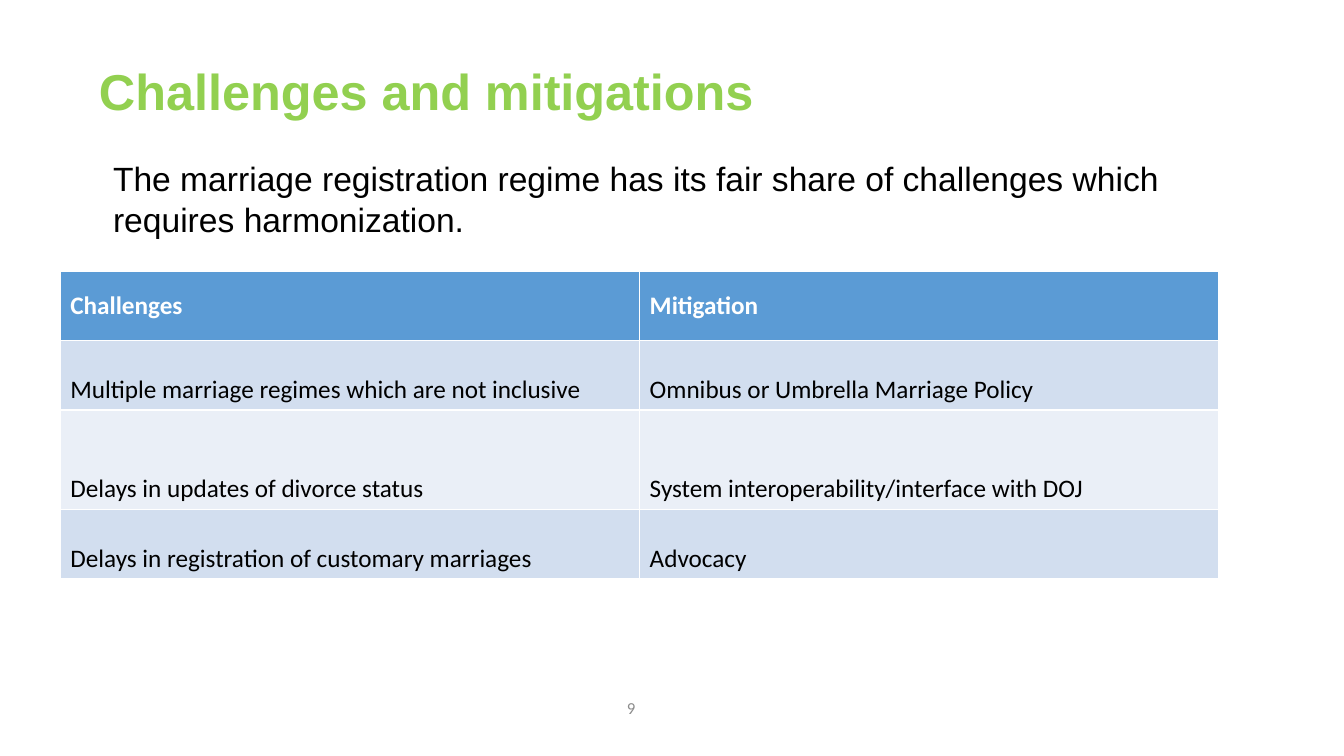
from pptx import Presentation
from pptx.dml.color import RGBColor as Rgb
from pptx.enum.text import MSO_ANCHOR as Anchor, PP_ALIGN as Align
from pptx.util import Cm, Pt

ROWS = [
    ("Challenges", "Mitigation"),
    ("Multiple marriage regimes which are not inclusive",
     "Omnibus or Umbrella Marriage Policy"),
    ("Delays in updates of divorce status",
     "System interoperability/interface with DOJ"),
    ("Delays in registration of customary marriages", "Advocacy"),
]
HEIGHTS = [1.75, 1.75, 2.51, 1.75]
FILLS = ["5B9BD5", "D2DEEF", "EAEFF7", "D2DEEF"]


def paint(target, color):
    target.rgb = Rgb.from_string(color)


def write(frame, text, size, font, color, bold=False, align=Align.LEFT):
    para = frame.paragraphs[0]
    para.alignment = align
    run = para.add_run()
    run.text = text
    run.font.size = Pt(size)
    run.font.name = font
    run.font.bold = bold
    paint(run.font.color, color)


def add_title(slide, text):
    title = slide.shapes.title
    title.left, title.top = Cm(2.24), Cm(1.02)
    title.width, title.height = Cm(29.31), Cm(2.72)
    frame = title.text_frame
    frame.vertical_anchor = Anchor.MIDDLE
    write(frame, text, 36, "Arial", "92D050", bold=True)
    frame.paragraphs[0].line_spacing = 0.9


def add_text(slide, box, anchor=Anchor.TOP):
    frame = slide.shapes.add_textbox(*map(Cm, box)).text_frame
    frame.word_wrap = True
    frame.vertical_anchor = anchor
    return frame


def add_grid(slide):
    shape = slide.shapes.add_table(
        len(ROWS), 2, Cm(1.52), Cm(6.83), Cm(29.2), Cm(sum(HEIGHTS)))
    table = shape.table
    for index, (texts, height, fill) in enumerate(zip(ROWS, HEIGHTS, FILLS)):
        table.rows[index].height = Cm(height)
        head = index == 0
        for col, text in enumerate(texts):
            cell = table.cell(index, col)
            cell.fill.solid()
            paint(cell.fill.fore_color, fill)
            cell.vertical_anchor = Anchor.MIDDLE if head else Anchor.BOTTOM
            color = "FFFFFF" if head else "000000"
            write(cell.text_frame, text, 18, "Calibri", color, bold=head)


def main():
    """Build the slide on challenges and mitigations."""
    deck = Presentation()
    deck.slide_width, deck.slide_height = Cm(33.87), Cm(19.05)
    slide = deck.slides.add_slide(deck.slide_layouts[5])
    add_title(slide, "Challenges and mitigations")
    add_grid(slide)
    intro = add_text(slide, (1.96, 3.86, 29.85, 2.31))
    intro.margin_left = Cm(0.89)
    write(intro, "The marriage registration regime has its fair share of "
          "challenges which requires harmonization.", 24, "Arial", "000000")
    number = add_text(slide, (8.64, 17.32, 7.62, 1.02), Anchor.MIDDLE)
    write(number, "9", 12, "Calibri", "8C8C8C", align=Align.RIGHT)
    deck.save("out.pptx")


if __name__ == "__main__":
    main()
